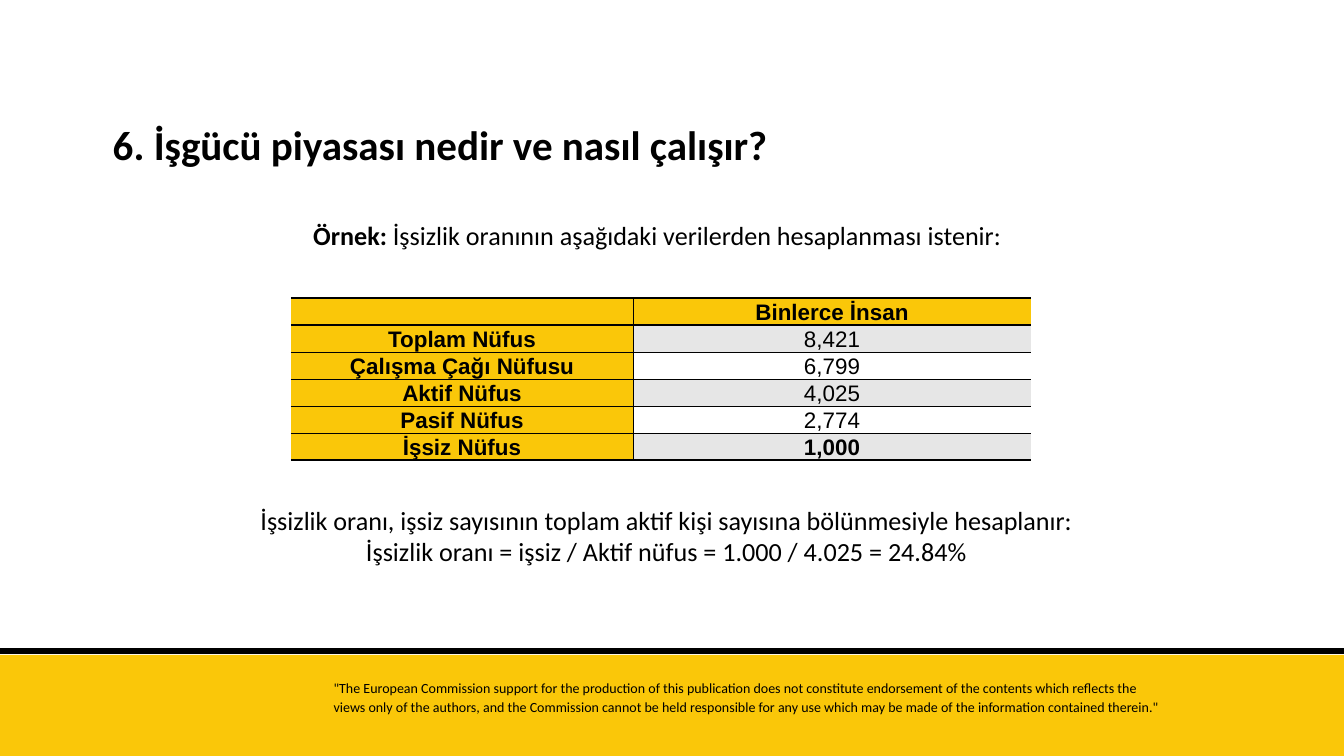
import pptx
import pptx.util
import pptx.dml.color
import pptx.enum.shapes
import pptx.enum.text
import pptx.oxml.ns
import lxml.etree

SCALE = 914400 / 67.2
COLORS = {"yellow": "FAC709", "black": "000000", "grey": "E6E6E6", "white": "FFFFFF"}

TITLE = "6. İşgücü piyasası nedir ve nasıl çalışır?"
EXAMPLE = [[("Örnek: ", True), ("İşsizlik oranının aşağıdaki verilerden hesaplanması istenir:", False)]]
RESULT = [
    [("İşsizlik oranı, işsiz sayısının toplam aktif kişi sayısına bölünmesiyle hesaplanır:", False)],
    [("İşsizlik oranı = işsiz / Aktif nüfus = 1.000 / 4.025 = 24.84%", False)],
]
DISCLAIMER = [
    [("\"The European Commission support for the production of this publication does not constitute "
      "endorsement of the contents which reflects the", False)],
    [("views only of the authors, and the Commission cannot be held responsible for any use which may "
      "be made of the information contained therein.\"", False)],
]
TABLE = [
    ("", "Binlerce İnsan"),
    ("Toplam Nüfus", "8,421"),
    ("Çalışma Çağı Nüfusu", "6,799"),
    ("Aktif Nüfus", "4,025"),
    ("Pasif Nüfus", "2,774"),
    ("İşsiz Nüfus", "1,000"),
]
COLUMN_WIDTHS = [342, 398]
ROW_HEIGHT = 27


def px(value):
    return pptx.util.Emu(round(value * SCALE))


def color(name):
    return pptx.dml.color.RGBColor.from_string(COLORS[name])


def style(font, size, name="Calibri", bold=None):
    font.name = name
    font.size = pptx.util.Pt(size)
    font.color.rgb = color("black")
    font.bold = bold


def add_text(slide, box, paragraphs, size, alignment, spacing=None):
    frame = slide.shapes.add_textbox(*map(px, box)).text_frame
    frame.word_wrap = True
    for index, runs in enumerate(paragraphs):
        paragraph = frame.paragraphs[0] if index == 0 else frame.add_paragraph()
        paragraph.alignment = alignment
        paragraph.line_spacing = spacing
        style(paragraph.font, size)
        for text, bold in runs:
            run = paragraph.add_run()
            run.text = text
            if bold:
                run.font.bold = True


def add_border(cell, side, width):
    properties = cell._tc.get_or_add_tcPr()
    qn = pptx.oxml.ns.qn
    line = lxml.etree.SubElement(properties, qn(f"a:ln{side}"), w=str(pptx.util.Pt(width)))
    if width:
        fill = lxml.etree.SubElement(line, qn("a:solidFill"))
        lxml.etree.SubElement(fill, qn("a:srgbClr"), val=COLORS["black"])
    else:
        lxml.etree.SubElement(line, qn("a:noFill"))


def add_footer(slide):
    band = slide.shapes.add_shape(
        pptx.enum.shapes.MSO_SHAPE.RECTANGLE, px(0), px(655), px(1344), px(101))
    band.shadow.inherit = False
    band.fill.solid()
    band.fill.fore_color.rgb = color("yellow")
    band.line.fill.background()

    rule = slide.shapes.add_connector(
        pptx.enum.shapes.MSO_CONNECTOR.STRAIGHT, px(0), px(651), px(1344), px(651))
    rule.line.color.rgb = color("black")
    rule.line.width = pptx.util.Pt(6.75)
    lxml.etree.SubElement(rule._element.spPr, pptx.oxml.ns.qn("a:effectLst"))

    add_text(slide, (327, 675, 849, 59), DISCLAIMER, 15, pptx.enum.text.PP_ALIGN.JUSTIFY, 1.1)


def add_population_table(slide):
    last = len(TABLE) - 1
    table = slide.shapes.add_table(
        len(TABLE), 2, px(291), px(298), px(sum(COLUMN_WIDTHS)), px(ROW_HEIGHT * len(TABLE))).table
    for column, width in zip(table.columns, COLUMN_WIDTHS):
        column.width = px(width)
    for row_index, values in enumerate(TABLE):
        table.rows[row_index].height = px(ROW_HEIGHT)
        for column_index, text in enumerate(values):
            cell = table.cell(row_index, column_index)
            cell.margin_left = cell.margin_right = pptx.util.Inches(0.05)
            cell.margin_top = cell.margin_bottom = 0
            cell.vertical_anchor = pptx.enum.text.MSO_ANCHOR.BOTTOM
            add_border(cell, "L", column_index)
            add_border(cell, "R", 1 - column_index)
            add_border(cell, "T", 2 if row_index in (0, 1) else 1)
            add_border(cell, "B", 2 if row_index in (0, last) else 1)
            label = row_index == 0 or column_index == 0
            cell.fill.solid()
            cell.fill.fore_color.rgb = color(
                "yellow" if label else "grey" if row_index % 2 else "white")
            paragraph = cell.text_frame.paragraphs[0]
            paragraph.text = text
            paragraph.alignment = pptx.enum.text.PP_ALIGN.CENTER
            style(paragraph.font, 24, "Arial", label or row_index == last)


def main():
    presentation = pptx.Presentation()
    presentation.slide_width, presentation.slide_height = px(1344), px(756)
    slide = presentation.slides.add_slide(presentation.slide_layouts[5])
    add_footer(slide)

    title = slide.shapes.title
    title.left, title.top, title.width, title.height = map(px, (106, 116, 739, 106))
    title.text_frame.text = TITLE
    title.text_frame.auto_size = pptx.enum.text.MSO_AUTO_SIZE.NONE
    title.text_frame.vertical_anchor = pptx.enum.text.MSO_ANCHOR.TOP
    paragraph = title.text_frame.paragraphs[0]
    paragraph.alignment = pptx.enum.text.PP_ALIGN.LEFT
    style(paragraph.font, 44, bold=True)

    center = pptx.enum.text.PP_ALIGN.CENTER
    add_text(slide, (139, 501, 1054, 70), RESULT, 28, center)
    add_population_table(slide)
    add_text(slide, (136, 216, 1042, 70), EXAMPLE, 28, center)
    presentation.save("out.pptx")


if __name__ == "__main__":
    main()
